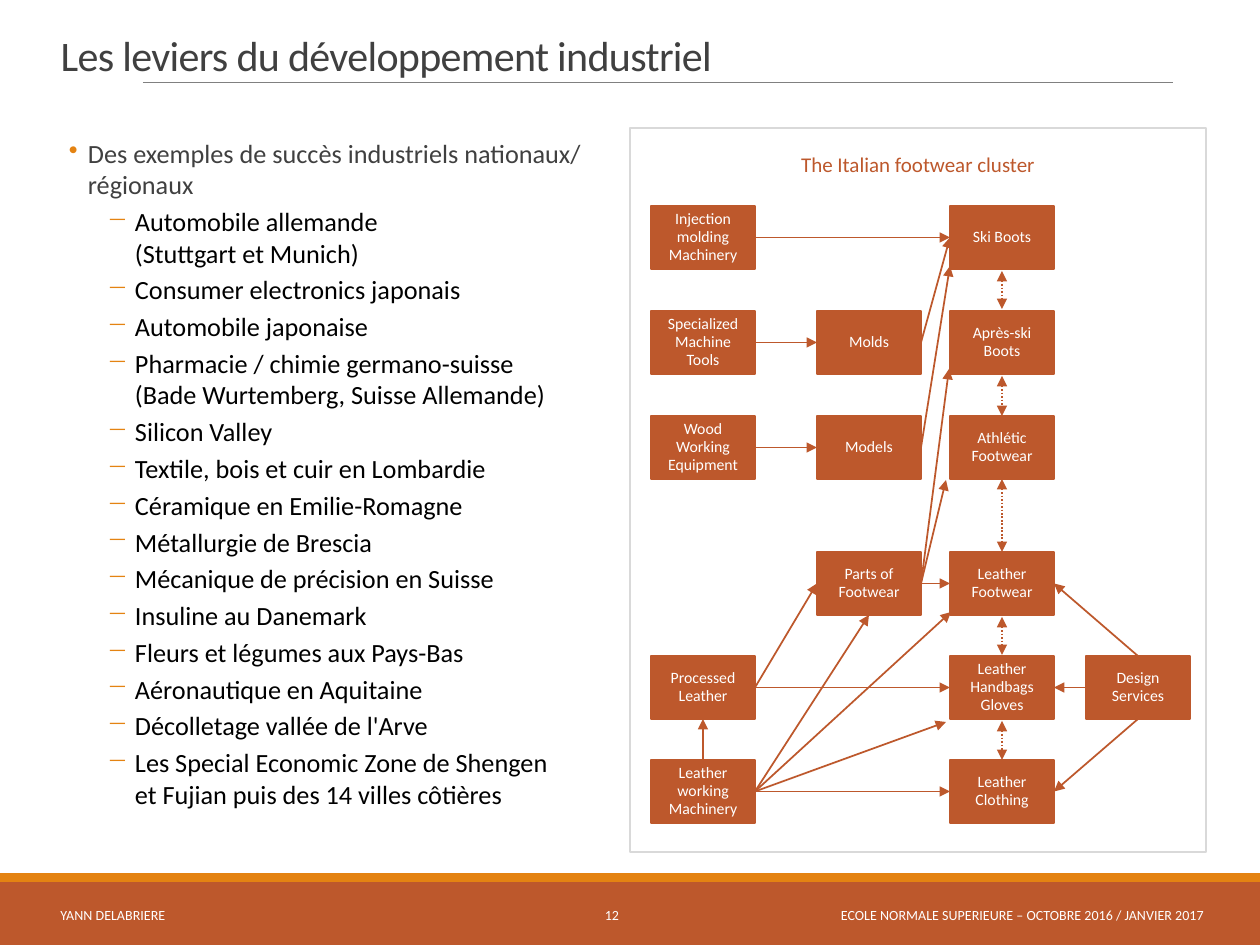
from lxml import etree
from pptx import Presentation
from pptx.dml.color import RGBColor
from pptx.enum.dml import MSO_LINE
from pptx.enum.shapes import MSO_CONNECTOR, MSO_SHAPE
from pptx.enum.text import MSO_ANCHOR, MSO_AUTO_SIZE, PP_ALIGN
from pptx.oxml.ns import qn
from pptx.util import Pt

LEFT, MID, RIGHT = PP_ALIGN.LEFT, PP_ALIGN.CENTER, PP_ALIGN.RIGHT
TOP, CENTER, BOTTOM = MSO_ANCHOR.TOP, MSO_ANCHOR.MIDDLE, MSO_ANCHOR.BOTTOM
RECT = MSO_SHAPE.RECTANGLE
STRAIGHT = MSO_CONNECTOR.STRAIGHT
DOTS = MSO_LINE.ROUND_DOT
FIXED = MSO_AUTO_SIZE.NONE

SCALE = 914400 / 126
FONT = "Calibri"
COLORS = {
    "rust": "BD582C", "amber": "E48312", "gray": "808080", "pale": "D9D9D9",
    "dark": "404040", "black": "000000", "white": "FFFFFF",
}

COLS = [651, 817, 950, 1086]
ROWS = [206, 311, 416, 552, 656, 760]
BOX_W, BOX_H = 104, 63
BOXES = {
    "inject": (0, 0, "Injection molding Machinery"),
    "tools": (0, 1, "Specialized Machine Tools"),
    "wood": (0, 2, "Wood\nWorking Equipment"),
    "hides": (0, 4, "Processed Leather"),
    "plant": (0, 5, "Leather working Machinery"),
    "molds": (1, 1, "Molds"),
    "models": (1, 2, "Models"),
    "parts": (1, 3, "Parts of Footwear"),
    "ski": (2, 0, "Ski Boots"),
    "apres": (2, 1, "Après-ski Boots"),
    "sport": (2, 2, "Athlétic Footwear"),
    "shoes": (2, 3, "Leather Footwear"),
    "bags": (2, 4, "Leather Handbags Gloves"),
    "wear": (2, 5, "Leather Clothing"),
    "design": (3, 4, "Design Services"),
}
SIDES = {
    "left": (0, 0.5), "right": (1, 0.5), "top": (0.5, 0),
    "bottom": (0.5, 1), "corner": (0, 1),
}
LINKS = [
    ("inject", "right", "ski", "left"),
    ("tools", "right", "molds", "left"),
    ("wood", "right", "models", "left"),
    ("molds", "right", "ski", "left"),
    ("models", "right", "ski", "corner", 0, -3),
    ("design", "top", "shoes", "right"),
    ("design", "bottom", "wear", "right"),
    ("design", "left", "bags", "right"),
    ("plant", "right", "wear", "left"),
    ("hides", "right", "bags", "left"),
    ("plant", "top", "hides", "bottom"),
    ("plant", "right", "bags", "corner", -4, 3),
    ("plant", "right", "shoes", "corner", 1, -3),
    ("plant", "right", "parts", "bottom"),
    ("hides", "right", "parts", "left"),
    ("parts", "right", "apres", "corner", -1, -5),
    ("parts", "right", "sport", "corner", -4, 1),
    ("parts", "right", "shoes", "left"),
]
PAIRS = [
    ("ski", "apres", 2, -2), ("apres", "sport", 2, 0), ("sport", "shoes", 0, 0),
    ("shoes", "bags", 2, -1), ("bags", "wear", 2, 0),
]
INTRO = "Des exemples de succès industriels nationaux/\nrégionaux"
CASES = [
    "Automobile allemande\n(Stuttgart et Munich)",
    "Consumer electronics japonais",
    "Automobile japonaise",
    "Pharmacie / chimie germano-suisse\n(Bade Wurtemberg, Suisse Allemande)",
    "Silicon Valley",
    "Textile, bois et cuir en Lombardie",
    "Céramique en Emilie-Romagne",
    "Métallurgie de Brescia",
    "Mécanique de précision en Suisse",
    "Insuline au Danemark",
    "Fleurs et légumes aux Pays-Bas",
    "Aéronautique en Aquitaine",
    "Décolletage vallée de l'Arve",
    "Les Special Economic Zone de Shengen\net Fujian puis des 14 villes côtières",
]
FOOTER = [
    (48, 348, LEFT, "YANN DELABRIERE"),
    (544, 136, MID, "12"),
    (803, 414, RIGHT, "ECOLE NORMALE SUPERIEURE – OCTOBRE 2016 / JANVIER 2017"),
]


def px(num):
    return round(num * SCALE)


def tint(name):
    return RGBColor.from_string(COLORS[name])


def style(para, text, size, color, align=LEFT):
    para.text = text
    para.alignment = align
    para.font.name = FONT
    para.font.size = Pt(size)
    para.font.color.rgb = tint(color)


def write(shape, text, size, color, align=LEFT, anchor=CENTER):
    frame = shape.text_frame
    frame.word_wrap = True
    frame.vertical_anchor = anchor
    para = frame.paragraphs[0]
    style(para, text, size, color, align)
    return para


def add_rect(slide, x, y, w, h, fill=None, line=None):
    rect = slide.shapes.add_shape(RECT, px(x), px(y), px(w), px(h))
    rect.shadow.inherit = False
    if fill:
        rect.fill.solid()
        rect.fill.fore_color.rgb = tint(fill)
    else:
        rect.fill.background()
    if line:
        rect.line.color.rgb = tint(line)
        rect.line.width = Pt(1)
    else:
        rect.line.fill.background()
    return rect


def add_label(slide, x, y, w, h, *text):
    label = slide.shapes.add_textbox(px(x), px(y), px(w), px(h))
    return write(label, *text)


def add_line(slide, start, end, color="rust", width=1, ends=(), dash=None):
    line = slide.shapes.add_connector(STRAIGHT, *map(px, (*start, *end)))
    etree.SubElement(line._element.spPr, qn("a:effectLst"))
    line.line.color.rgb = tint(color)
    line.line.width = Pt(width)
    if dash:
        line.line.dash_style = dash
    for end in ends:
        etree.SubElement(line.line._get_or_add_ln(), qn(f"a:{end}"), type="triangle")


def add_title(slide):
    title = slide.shapes.title
    title.left, title.top, title.width, title.height = map(px, (48, 5, 1212, 81))
    title.text_frame.auto_size = FIXED
    para = write(title, "Les leviers du développement industriel", 24, "dark",
                 LEFT, BOTTOM)
    para.line_spacing = 0.85
    para._p.pPr.find(qn("a:defRPr")).set("spc", "-40")


def add_point(para, text, mark, color, margin, indent):
    props = para._p.get_or_add_pPr()
    props.set("marL", str(px(margin)))
    props.set("indent", str(px(indent)))
    paint = etree.SubElement(props, qn("a:buClr"))
    etree.SubElement(paint, qn("a:srgbClr"), val=COLORS["amber"])
    etree.SubElement(props, qn("a:buChar"), char=mark)
    style(para, text, 15, color)


def add_list(slide):
    body = slide.shapes.add_textbox(px(48), px(131), px(1158), px(740))
    frame = body.text_frame
    frame.word_wrap = True
    frame.margin_left = frame.margin_right = 0
    add_point(frame.paragraphs[0], INTRO, "•", "dark", 40, -19)
    for case in CASES:
        para = frame.add_paragraph()
        add_point(para, case, "−", "black", 87, -28)
        para.space_before = Pt(3)


def spot(name, side, dx=0, dy=0):
    col, row, _ = BOXES[name]
    fx, fy = SIDES[side]
    return COLS[col] + fx * BOX_W + dx, ROWS[row] + fy * BOX_H + dy


def add_chain(slide):
    add_rect(slide, 630, 128, 576, 724, line="pale")
    add_label(slide, 630, 145, 576, 38, "The Italian footwear cluster",
              12, "rust", MID, TOP)
    for col, row, text in BOXES.values():
        box = add_rect(slide, COLS[col], ROWS[row], BOX_W, BOX_H, "rust", "rust")
        write(box, text, 9, "white", MID).line_spacing = 0.95
    for source, side, *goal in LINKS:
        add_line(slide, spot(source, side), spot(*goal), ends=("tailEnd",))
    for upper, lower, drop, lift in PAIRS:
        add_line(slide, spot(upper, "bottom", 0, drop), spot(lower, "top", 0, lift),
                 ends=("headEnd", "tailEnd"), dash=DOTS)


def main():
    deck = Presentation()
    deck.slide_width, deck.slide_height = px(1260), px(945)
    slide = deck.slides.add_slide(deck.slide_layouts[5])
    add_rect(slide, 0, 882, 1260, 63, "rust")
    add_rect(slide, 0, 873, 1260, 9, "amber")
    add_line(slide, (143, 82), (1173, 82), "gray", 0.5)
    add_title(slide)
    add_list(slide)
    for x, w, align, text in FOOTER:
        add_label(slide, x, 890, w, 50, text, 8, "white", align)
    add_chain(slide)
    deck.save("out.pptx")


if __name__ == "__main__":
    main()
